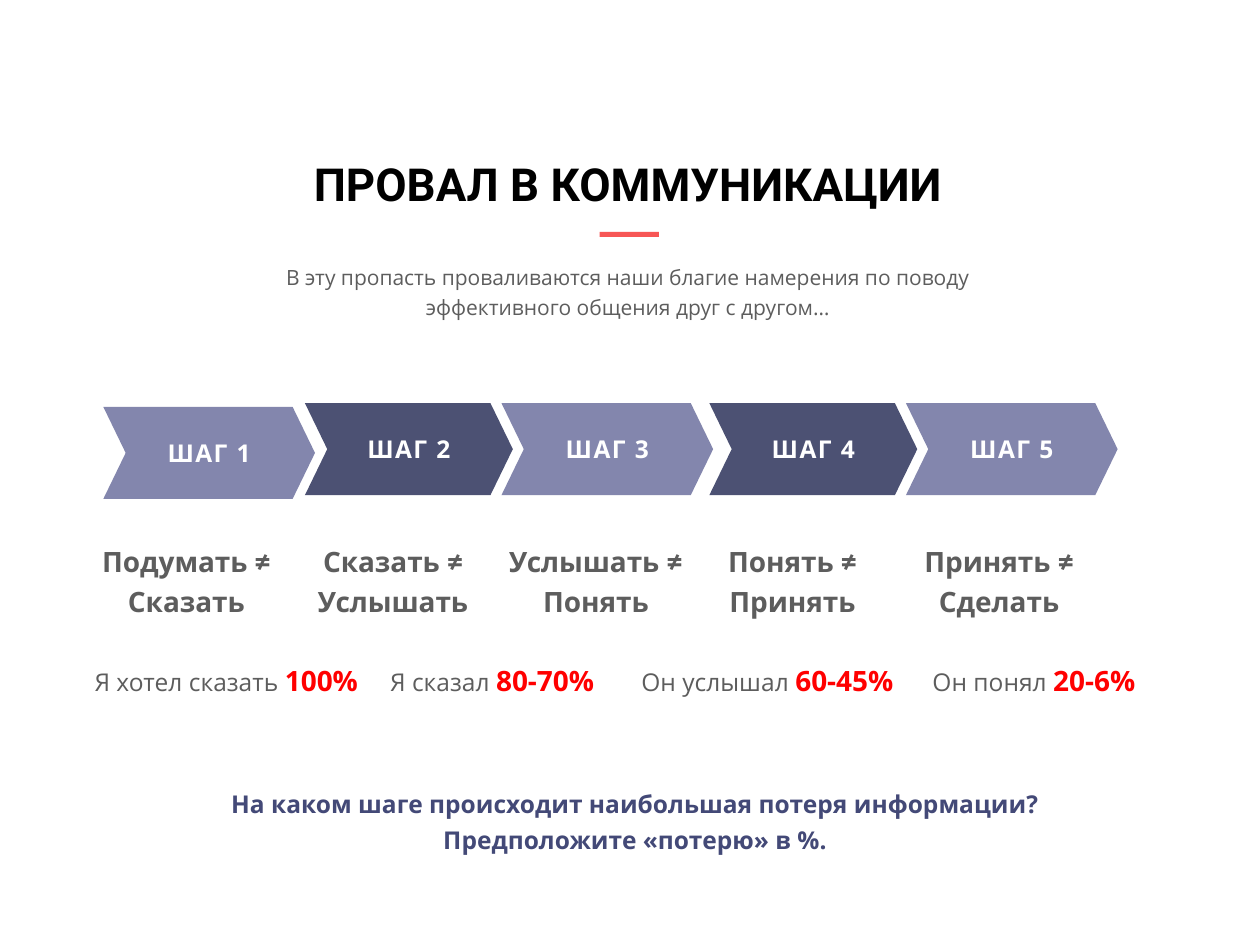
from pptx import Presentation
from pptx.dml.color import RGBColor
from pptx.enum.shapes import MSO_SHAPE
from pptx.enum.text import MSO_ANCHOR, MSO_AUTO_SIZE, PP_ALIGN
from pptx.util import Inches, Pt

CHEVRON, RECT = MSO_SHAPE.CHEVRON, MSO_SHAPE.RECTANGLE
TOP, MIDDLE = MSO_ANCHOR.TOP, MSO_ANCHOR.MIDDLE
CENTER = PP_ALIGN.CENTER
NO_AUTOFIT = MSO_AUTO_SIZE.NONE

BLACK, WHITE, GRAY, RED = "000000", "FFFFFF", "5D5D5D", "FF0000"
LILAC, SLATE, NAVY, CORAL = "8386AD", "4C5173", "434977", "F75655"
TITLE_FONT, BODY_FONT = "Roboto", "Open Sans"


def rgb(value):
    return RGBColor.from_string(value)


class Deck:
    """Holds the style and the current slide."""

    def __init__(self, width, height):
        self.prs = Presentation()
        self.prs.slide_width = Inches(width)
        self.prs.slide_height = Inches(height)

    def add_slide(self):
        self.s = self.prs.slides.add_slide(self.prs.slide_layouts[5])

    def font(self, r, size, color, bold=False, name=BODY_FONT):
        r.font.name = name
        r.font.size = Pt(size)
        r.font.bold = bold
        r.font.color.rgb = rgb(color)

    def title(self, text, x, y, w, h):
        sp = self.s.shapes.title
        sp.left, sp.top, sp.width, sp.height = map(Inches, (x, y, w, h))
        tf = sp.text_frame
        tf.text = text
        tf.auto_size = NO_AUTOFIT
        tf.word_wrap = False
        tf.vertical_anchor = TOP
        p = tf.paragraphs[0]
        p.alignment = CENTER
        self.font(p.runs[0], 26, BLACK, True, TITLE_FONT)

    def text(self, runs, x, y, w, h, before=6):
        """Add centred text; each run is (text, size, color, bold)."""
        sp = self.s.shapes.add_textbox(*map(Inches, (x, y, w, h)))
        tf = sp.text_frame
        tf.word_wrap = True
        p = tf.paragraphs[0]
        p.alignment = CENTER
        p.line_spacing = 1.2
        p.space_before = Pt(before)
        for text, size, color, bold in runs:
            r = p.add_run()
            r.text = text
            self.font(r, size, color, bold)

    def shape(self, kind, x, y, w, h, fill):
        sp = self.s.shapes.add_shape(kind, *map(Inches, (x, y, w, h)))
        sp.shadow.inherit = False
        sp.fill.solid()
        sp.fill.fore_color.rgb = rgb(fill)
        sp.line.fill.background()
        return sp

    def chevron(self, text, x, y, w, fill):
        sp = self.shape(CHEVRON, x, y, w, 0.73, fill)
        sp.adjustments[0] = 0.243
        tf = sp.text_frame
        tf.text = text
        tf.vertical_anchor = MIDDLE
        p = tf.paragraphs[0]
        p.alignment = CENTER
        r = p.runs[0]
        self.font(r, 14, WHITE, True)
        r._r.get_or_add_rPr().set("spc", "80")


def main():
    deck = Deck(10, 7.5)
    deck.add_slide()
    deck.title("ПРОВАЛ В КОММУНИКАЦИИ", 1.75, 1.19, 6.47, 0.44)
    deck.shape(RECT, 4.76, 1.84, 0.47, 0.04, CORAL)
    deck.text([("В эту пропасть проваливаются наши благие намерения по поводу "
                "эффективного общения друг с другом…", 12, GRAY, False)],
              1.75, 2.01, 6.47, 0.82, before=10)

    # chevron left, chevron top, label left, label width, label
    steps = [
        (0.82, 3.23, 0.70, 1.56, "Подумать ≠ Сказать"),
        (2.42, 3.20, 2.34, 1.56, "Сказать ≠ Услышать"),
        (3.98, 3.20, 3.91, 1.64, "Услышать ≠ Понять"),
        (5.63, 3.20, 5.47, 1.64, "Понять ≠ Принять"),
        (7.19, 3.20, 7.11, 1.64, "Принять ≠ Сделать"),
    ]
    for i, (x, y, label_x, label_w, label) in enumerate(steps):
        width, fill = ((1.68, LILAC), (1.65, SLATE))[i % 2]
        deck.chevron(f"ШАГ {i + 1}", x, y, width, fill)
        deck.text([(label, 16, GRAY, True)], label_x, 4.22, label_w, 1.26)

    losses = [
        (0.39, 2.81, "Я хотел сказать ", "100%"),
        (2.81, 2.19, "Я сказал ", "80-70%"),
        (4.92, 2.34, "Он услышал ", "60-45%"),
        (7.11, 2.19, "Он понял ", "20-6%"),
    ]
    for x, w, phrase, share in losses:
        deck.text([(phrase, 14, GRAY, False), (share, 16, RED, True)],
                  x, 5.16, w, 0.39)

    deck.text([("На каком шаге происходит наибольшая потеря информации? "
                "Предположите «потерю» в %.", 14, NAVY, True)],
              1.25, 6.17, 7.58, 0.82, before=10)
    deck.prs.save("out.pptx")


if __name__ == "__main__":
    main()
